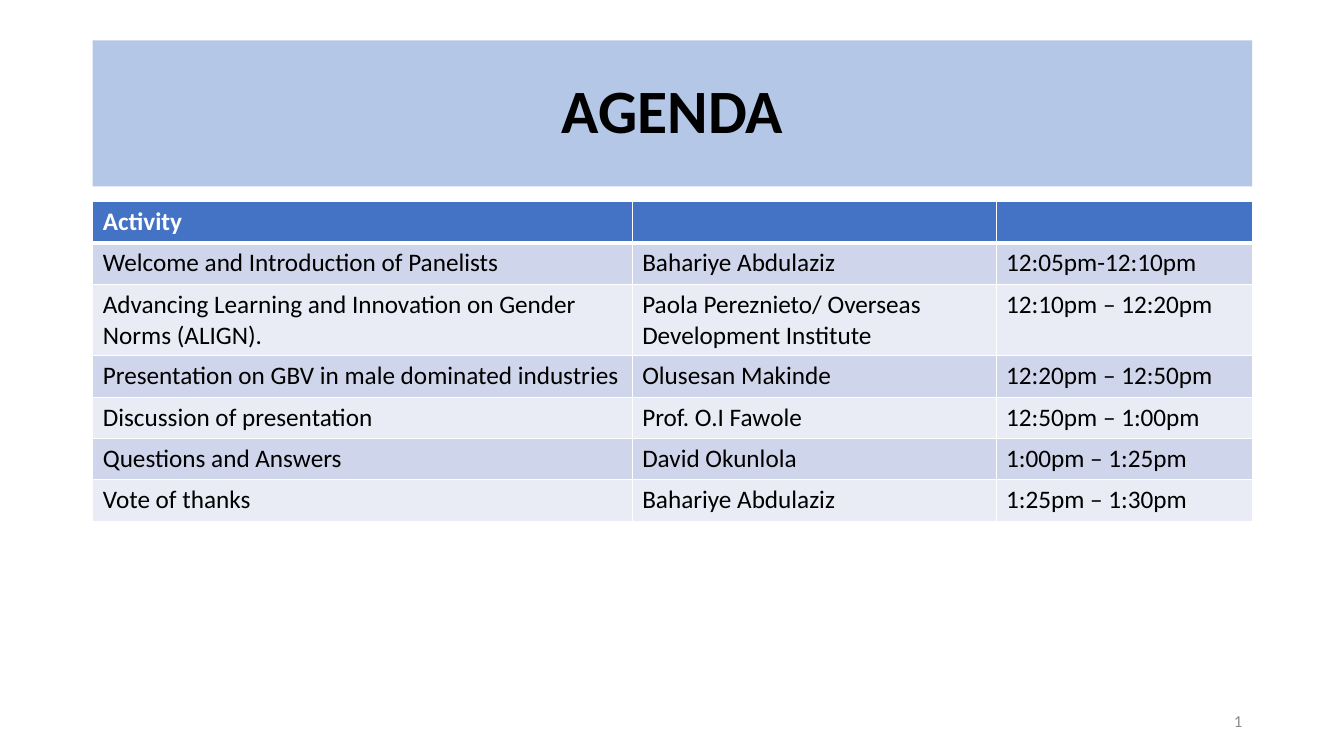
from lxml import etree
from pptx import Presentation
from pptx.dml.color import RGBColor
from pptx.enum.shapes import MSO_SHAPE
from pptx.enum.text import MSO_ANCHOR, PP_ALIGN
from pptx.oxml.ns import qn
from pptx.util import Inches, Pt

RECT = MSO_SHAPE.RECTANGLE
MIDDLE = MSO_ANCHOR.MIDDLE
LEFT, CENTER, RIGHT = PP_ALIGN.LEFT, PP_ALIGN.CENTER, PP_ALIGN.RIGHT

FONT = "Calibri"
BLACK, WHITE, GREY = "000000", "FFFFFF", "8C8C8C"
BANNER, HEAD = "B4C7E7", "4472C4"
BANDS = ("CFD5EA", "E9EBF5")
MARGIN, WIDTH = 0.92, 11.5
COLS = (5.35, 3.61, 2.54)
ROW = 0.41
AGENDA = [
    ("Activity", "", ""),
    ("Welcome and Introduction of Panelists", "Bahariye Abdulaziz",
     "12:05pm-12:10pm"),
    ("Advancing Learning and Innovation on Gender Norms (ALIGN).",
     "Paola Pereznieto/ Overseas Development Institute", "12:10pm – 12:20pm"),
    ("Presentation on GBV in male dominated industries", "Olusesan Makinde",
     "12:20pm – 12:50pm"),
    ("Discussion of presentation", "Prof. O.I Fawole", "12:50pm – 1:00pm"),
    ("Questions and Answers", "David Okunlola", "1:00pm – 1:25pm"),
    ("Vote of thanks", "Bahariye Abdulaziz", "1:25pm – 1:30pm"),
]


def paint(fill, color):
    fill.solid()
    fill.fore_color.rgb = RGBColor.from_string(color)


def write(frame, text, size=18, color=BLACK, bold=False, align=LEFT,
          spacing=None):
    para = frame.paragraphs[0]
    para.alignment = align
    para.line_spacing = spacing
    font = para.font
    if text:
        run = para.add_run()
        run.text = text
        font = run.font
    font.name, font.size, font.bold = FONT, Pt(size), bold
    font.color.rgb = RGBColor.from_string(color)


def edge(cell, side, width):
    """Draw a white border on side L, R, T or B; call before filling."""
    line = etree.SubElement(cell._tc.get_or_add_tcPr(), qn(f"a:ln{side}"),
                            w=str(Pt(width)))
    fill = etree.SubElement(line, qn("a:solidFill"))
    etree.SubElement(fill, qn("a:srgbClr"), val=WHITE)


def add_banner(slide, text):
    box = slide.shapes.add_shape(RECT, Inches(MARGIN), Inches(0.4),
                                 Inches(WIDTH), Inches(1.45))
    box.shadow.inherit = False
    box.line.fill.background()
    paint(box.fill, BANNER)
    box.text_frame.word_wrap = True
    box.text_frame.vertical_anchor = MIDDLE
    write(box.text_frame, text, size=44, bold=True, align=CENTER, spacing=0.9)


def add_agenda(slide):
    table = slide.shapes.add_table(
        len(AGENDA), len(COLS), Inches(MARGIN), Inches(2),
        Inches(WIDTH), Inches(ROW * len(AGENDA))).table
    for col, width in zip(table.columns, COLS):
        col.width = Inches(width)
    for r, texts in enumerate(AGENDA):
        table.rows[r].height = Inches(ROW)
        head = r == 0
        for c, text in enumerate(texts):
            cell = table.cell(r, c)
            for side in "LRTB":
                thick = (r, side) in ((0, "B"), (1, "T"))
                edge(cell, side, 3 if thick else 1)
            paint(cell.fill, HEAD if head else BANDS[(r - 1) % 2])
            write(cell.text_frame, text, bold=head,
                  color=WHITE if head else BLACK)


def add_number(slide, text):
    box = slide.shapes.add_textbox(Inches(9.42), Inches(6.95),
                                   Inches(3), Inches(0.4))
    box.text_frame.word_wrap = True
    box.text_frame.vertical_anchor = MIDDLE
    write(box.text_frame, text, size=12, color=GREY, align=RIGHT)


def main():
    prs = Presentation()
    prs.slide_width, prs.slide_height = Inches(13.33), Inches(7.5)
    slide = prs.slides.add_slide(prs.slide_layouts[6])
    add_banner(slide, "AGENDA")
    add_agenda(slide)
    add_number(slide, "1")
    prs.save("out.pptx")


if __name__ == "__main__":
    main()
